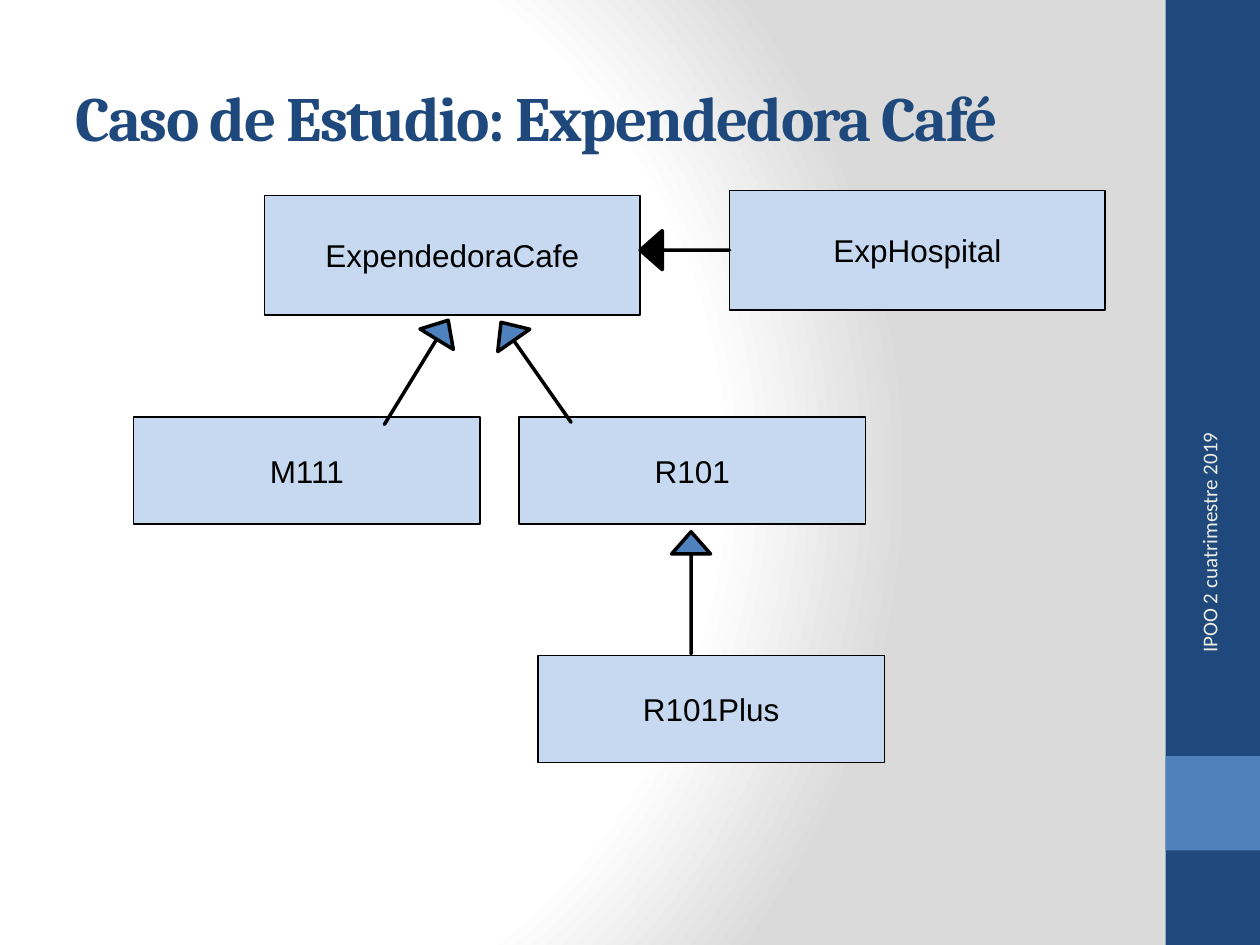
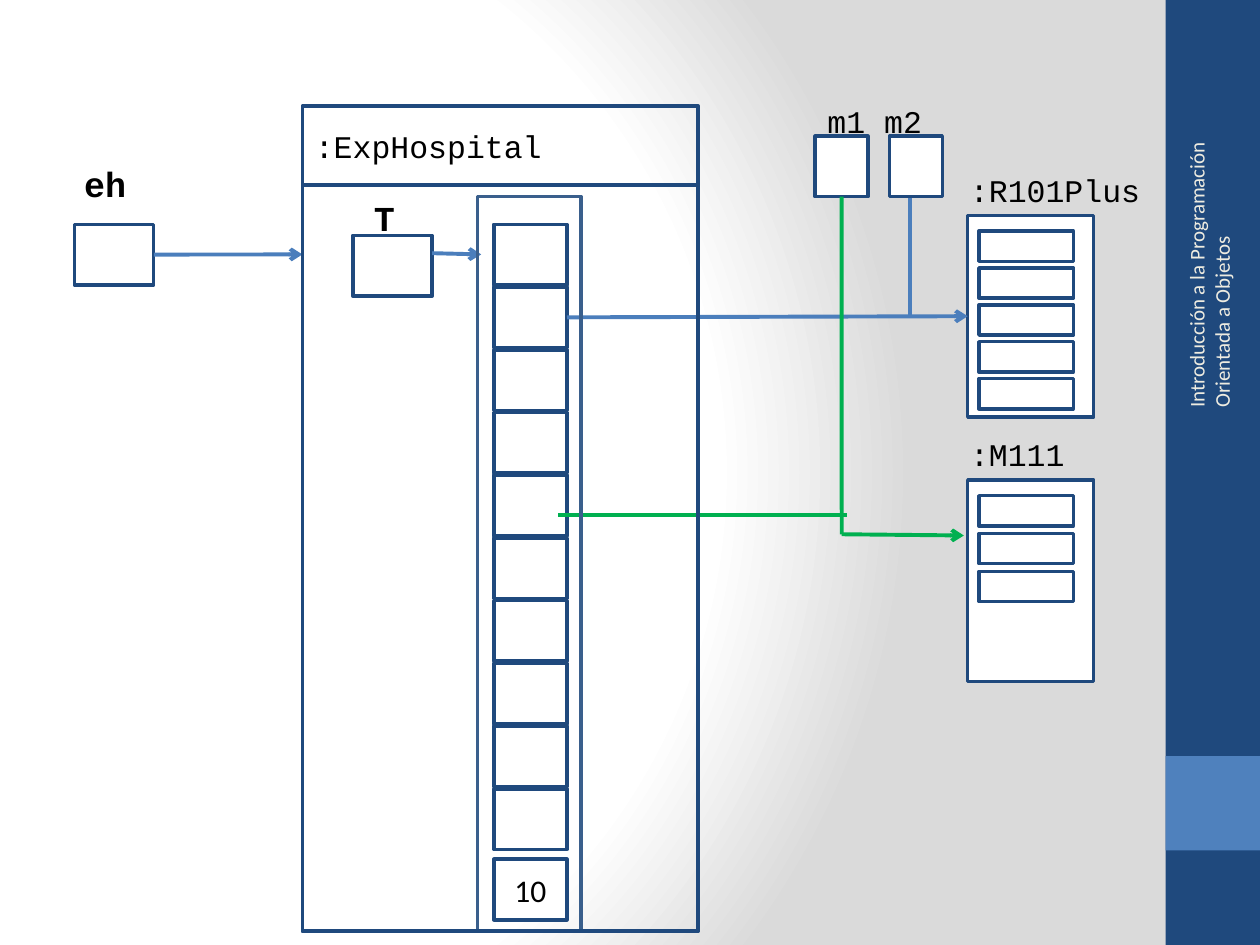
from lxml import etree
from pptx import Presentation
from pptx import oxml
from pptx.dml.color import RGBColor
from pptx.enum import shapes, text
from pptx.oxml import ns
from pptx.util import Pt

COLORS = {
    "navy": "1F497D", "blue": "4F81BD", "sky": "C6D9F1", "cream": "EEECE1",
    "link": "4B7EBC", "green": "00B050", "steel": "3A5F8C",
    "white": "FFFFFF", "grey": "DADADA", "black": "000000",
}
MONO = "Courier New"
RECT = shapes.MSO_SHAPE.RECTANGLE
ARROW = shapes.MSO_SHAPE.RIGHT_ARROW
LEFT, CENTER, RIGHT = text.PP_ALIGN.LEFT, text.PP_ALIGN.CENTER, text.PP_ALIGN.RIGHT
TOP, MIDDLE = text.MSO_ANCHOR.TOP, text.MSO_ANCHOR.MIDDLE


def rgb(name):
    return RGBColor.from_string(COLORS[name])


def write(tf, content, size=18, font="Calibri", color="black", bold=False,
          align=LEFT, anchor=TOP, wrap=True, spacing=None):
    """Put one formatted run into a text frame."""
    tf.word_wrap = wrap
    tf.vertical_anchor = anchor
    p = tf.paragraphs[0]
    p.alignment = align
    r = p.add_run()
    r.text = content
    r.font.size, r.font.name, r.font.bold = Pt(size), font, bold
    r.font.color.rgb = rgb(color)
    if spacing is not None:
        r.font._element.set("spc", str(round(spacing * 100)))


class Deck:
    """Holds the shared style and the slide being drawn."""

    def __init__(self):
        self.prs = Presentation()
        self.prs.slide_width, self.prs.slide_height = Pt(720), Pt(540)
        self.s = None
        self.set_background()

    def set_background(self):
        master = self.prs.slide_master
        master.background.fill.solid()
        bg = master.element.find(".//" + ns.qn("p:bgPr"))
        stops = "".join(
            f'<a:gs pos="{pos * 1000}"><a:srgbClr val="{COLORS[name]}"/></a:gs>'
            for pos, name in ((0, "white"), (75, "white"), (100, "grey")))
        bg.replace(bg[0], oxml.parse_xml(
            f'<a:gradFill {ns.nsdecls("a")} rotWithShape="1"><a:gsLst>{stops}</a:gsLst>'
            '<a:path path="circle"><a:fillToRect l="20000" t="50000" '
            'r="100000" b="50000"/></a:path></a:gradFill>'))

    def add_bands(self):
        """Draw the side bands and move them to the master."""
        tree = self.prs.slide_master.shapes._spTree
        bands = (self.box(666, 0, 54, 540, "navy", None),
                 self.box(666, 432, 54, 54, "blue", None))
        for i, band in enumerate(bands):
            tree.insert(2 + i, band._element)

    def new_slide(self, layout):
        first = self.s is None
        self.s = self.prs.slides.add_slide(self.prs.slide_layouts[layout])
        if first:
            self.add_bands()

    def title(self, content):
        sp = self.s.shapes.title
        sp.left, sp.top, sp.width, sp.height = Pt(36), Pt(21.6), Pt(600), Pt(90)
        write(sp.text_frame, content, size=36, font="Cambria", color="navy",
              bold=True, anchor=MIDDLE, spacing=-1)

    def label(self, content, x, y, w, h=28.8, **fmt):
        sp = self.s.shapes.add_textbox(Pt(x), Pt(y), Pt(w), Pt(h))
        write(sp.text_frame, content, **fmt)
        return sp

    def footer(self, content, x, y, w, align=LEFT):
        sp = self.label(content, x, y, w, size=12, color="cream",
                        align=align, anchor=MIDDLE)
        sp.rotation = 270

    def box(self, x, y, w, h, fill="white", line="navy", weight=2, kind=RECT):
        sp = self.s.shapes.add_shape(kind, Pt(x), Pt(y), Pt(w), Pt(h))
        sp.shadow.inherit = False
        if fill:
            sp.fill.solid()
            sp.fill.fore_color.rgb = rgb(fill)
        else:
            sp.fill.background()
        if line:
            sp.line.color.rgb = rgb(line)
            sp.line.width = Pt(weight)
        else:
            sp.line.fill.background()
        return sp

    def class_box(self, name, x, y, w=198, h=61.2):
        sp = self.box(x, y, w, h, "sky", "black", 0.75)
        write(sp.text_frame, name, font="Arial", align=CENTER, anchor=MIDDLE,
              wrap=False)

    def block_arrow(self, x, y, angle, w=69.8, fill="blue"):
        sp = self.box(x, y, w, 22.3, fill, "black", kind=ARROW)
        sp.adjustments[0], sp.adjustments[1] = 0, 0.567
        sp.rotation = angle

    def line(self, start, end, color="link", arrow=False):
        """Each end is a point (x, y) or a joint (shape, site)."""
        joints = [hasattr(e[0], "shape_id") for e in (start, end)]
        xy = [Pt(v) for e, joint in zip((start, end), joints)
              for v in ((0, 0) if joint else e)]
        c = self.s.shapes.add_connector(shapes.MSO_CONNECTOR.STRAIGHT, *xy)
        if joints[0]:
            c.begin_connect(*start)
        if joints[1]:
            c.end_connect(*end)
        c.line.color.rgb = rgb(color)
        c.line.width = Pt(2.25)
        props = c._element.spPr
        if arrow:
            etree.SubElement(props.find(ns.qn("a:ln")), ns.qn("a:tailEnd"), type="arrow")
        etree.SubElement(props, ns.qn("a:effectLst"))


def class_diagram(d):
    d.new_slide(5)
    d.title("Caso de Estudio: Expendedora Café")
    d.footer("IPOO 2 cuatrimestre 2019", 597.6, 319, 186.5, align=RIGHT)

    # Classes
    d.class_box("ExpendedoraCafe", 151.2, 111.6, 214.6, 68.4)
    d.class_box("ExpHospital", 416.9, 108.7, 214.6, 68.4)
    d.class_box("M111", 76.3, 238.3)
    d.class_box("R101", 296.6, 238.3)
    d.class_box("R101Plus", 307.4, 374.4)

    # Inheritance and association
    d.block_arrow(203, 201.6, 301.5)
    d.block_arrow(271.4, 201.6, 235)
    d.block_arrow(360, 327.6, 270)
    d.block_arrow(365.8, 131.8, 180, w=51.1, fill="black")


def object_diagram(d):
    d.new_slide(6)
    d.footer("Introducción a la Programación Orientada a Objetos", 594.7, 129.6, 192.2)

    # Machine objects with their attribute slots
    machines = {}
    for name, y, slots, pitch, w in ((":R101Plus", 123.1, 5, 21.06, 113),
                                     (":M111", 274.3, 3, 21.6, 85)):
        machines[name] = d.box(553, y, 72, 115.2)
        d.label(name, 547.2, y - 29, w, font=MONO)
        for i in range(slots):
            d.box(559.4, y + 9 + i * pitch, 54, 17.3)

    # Array cells
    cells = [d.box(282.2, 128.2 + i * 35.84, 41.8, 34.6) for i in range(10)]
    last = d.box(282.2, 491, 41.8, 34.6)
    write(last.text_frame, "10", align=CENTER, anchor=MIDDLE)

    # Links to the machines
    m1_bottom = (481, 305.3)
    d.line(m1_bottom, (550.8, 306), "green", arrow=True)
    d.line((cells[1], 3), (machines[":R101Plus"], 1), arrow=True)
    d.line((519.8, 180.7), (519.8, 112.3))

    # Variables
    m1 = d.box(465.8, 77.8, 30.2, 34.6)
    d.box(508.3, 77.8, 30.2, 34.6)
    d.line(m1_bottom, (m1, 2), "green")
    d.label("m1 m2", 465.8, 54.7, 127.4, font=MONO)
    d.line((319, 294.5), (483.8, 294.5), "green")
    eh = d.box(42.5, 128.2, 45.4, 34.6)
    d.label("eh", 41, 89.3, 46.8, 31.7, size=20, font=MONO, bold=True)
    d.line((eh, 3), (172.8, 145.4), arrow=True)

    # Hospital object
    d.box(172.8, 105.8, 226, 426.2, None)
    d.box(201.6, 134.6, 45.4, 34.6)
    d.label("T", 206.6, 108.7, 46.8, 31.7, size=20, font=MONO, bold=True)
    d.line((247, 144.7), (275, 145.4), arrow=True)
    d.label(":ExpHospital", 172.8, 69.1, 200.2, font=MONO)
    d.box(272.9, 112.3, 59, 419.8, None, "steel")
    d.box(172.8, 60.5, 226, 471.6, None)


def main():
    d = Deck()
    class_diagram(d)
    object_diagram(d)
    d.prs.save("out.pptx")


if __name__ == "__main__":
    main()
